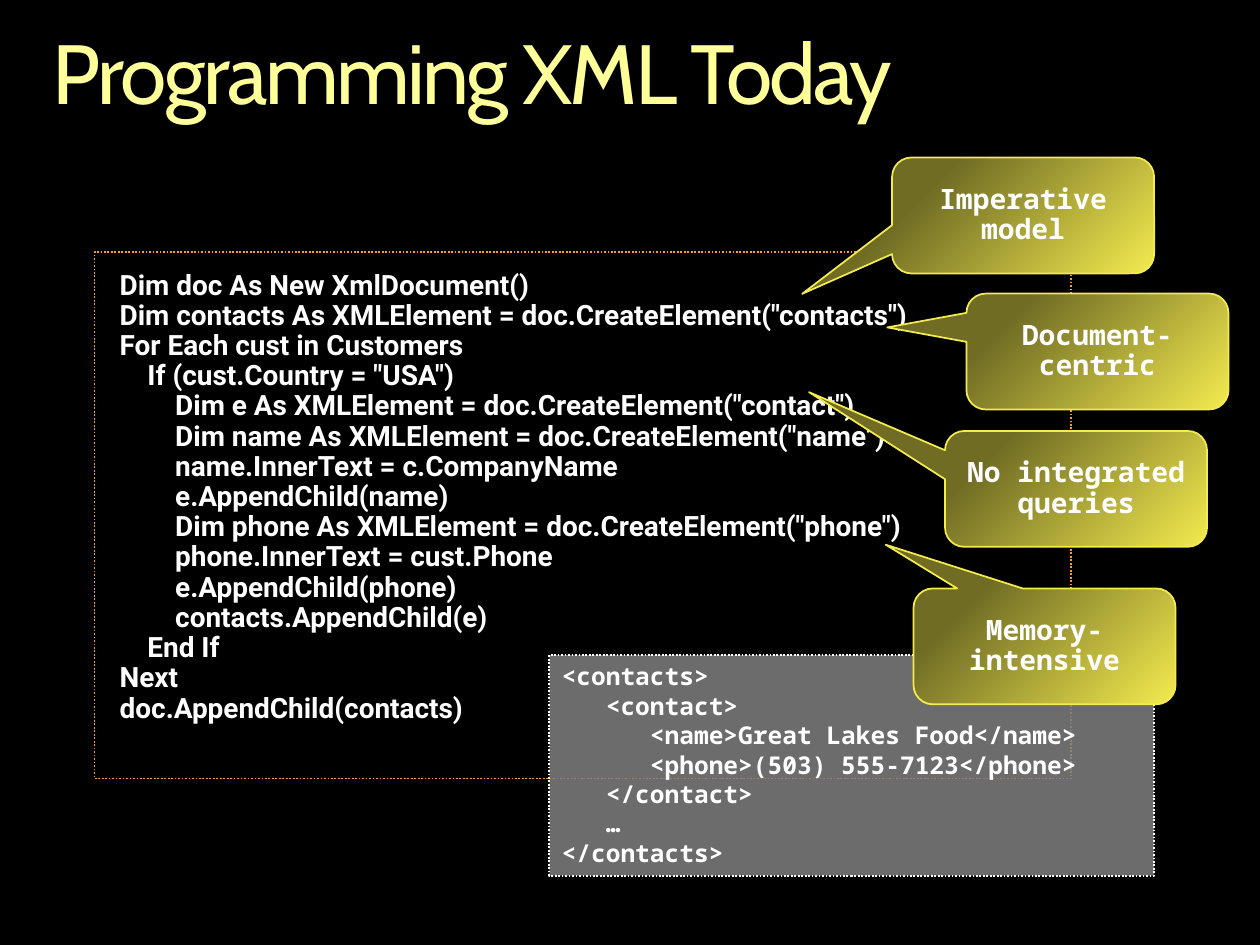
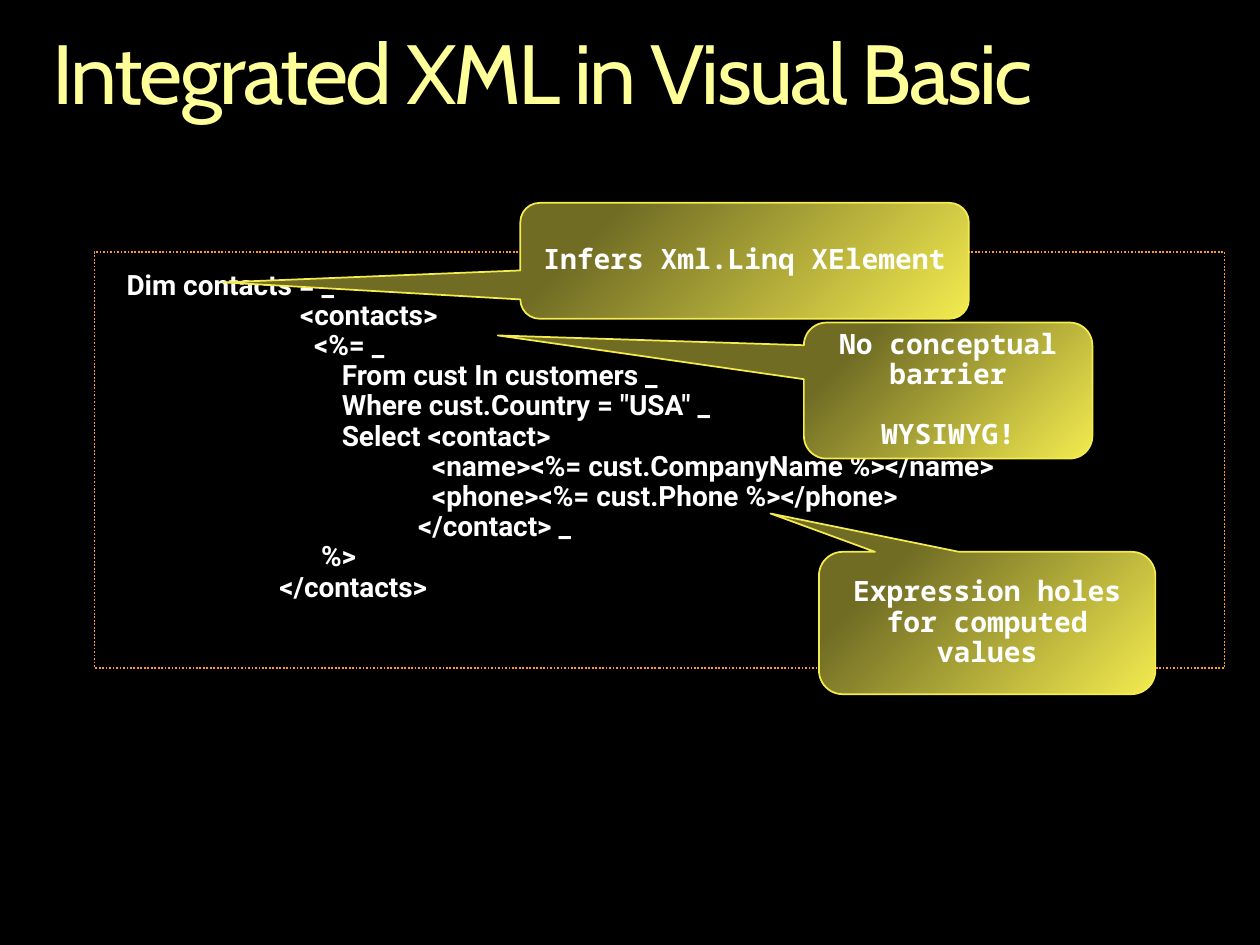
"""Build two slides comparing XML programming styles, with code panels and callouts."""
from dataclasses import dataclass

from lxml.etree import SubElement
from pptx import Presentation
from pptx.dml.color import RGBColor
from pptx.enum.dml import MSO_LINE
from pptx.enum.shapes import MSO_SHAPE as SHAPE
from pptx.enum.text import MSO_ANCHOR as ANCHOR, PP_ALIGN as ALIGN
from pptx.oxml.ns import qn
from pptx.util import Inches, Pt

COLORS = {
    "background": "000000",
    "title": "FFFF99",
    "text": "FFFFFF",
    "code_line": "FF9929",
    "xml_fill": "808080",
    "olive": "706C24",
    "yellow": "F3EB4F",
}
TITLE_FONT = {"name": "Cabin", "size": Pt(48)}
CODE_FONT = {"name": "Roboto", "size": Pt(16), "bold": True}
XML_FONT = {"name": "Noto Sans Mono", "size": Pt(14), "bold": True}
CALLOUT_FONT = {**XML_FONT, "size": Pt(16)}
CALLOUT_SIZE = (2.08, 0.92)
CALLOUT_STOPS = ((0.18, "olive"), (1, "yellow"))
CORNER = 0.167


@dataclass
class Panel:
    box: tuple
    text: str
    fill: str = "background"
    opacity: int = 34
    line: str = "code_line"
    font: dict = None
    insets: tuple = (0.2, 0.15)
    spacing: float = 0.9


@dataclass
class Callout:
    box: tuple
    tip: tuple
    text: str


@dataclass
class SlideContent:
    title: str
    panels: list
    callouts: list


DOM_CODE = """Dim doc As New XmlDocument()
Dim contacts As XMLElement = doc.CreateElement("contacts")
For Each cust in Customers
    If (cust.Country = "USA")
        Dim e As XMLElement = doc.CreateElement("contact")
        Dim name As XMLElement = doc.CreateElement("name")
        name.InnerText = c.CompanyName
        e.AppendChild(name)
        Dim phone As XMLElement = doc.CreateElement("phone")
        phone.InnerText = cust.Phone
        e.AppendChild(phone)
        contacts.AppendChild(e)
    End If
Next
doc.AppendChild(contacts)"""

CONTACTS_XML = """<contacts>
   <contact>
      <name>Great Lakes Food</name>
      <phone>(503) 555-7123</phone>
   </contact>
   …
</contacts>"""

LITERAL_CODE = """ Dim contacts = _
                          <contacts>
                            <%= _
                                From cust In customers _
                                Where cust.Country = "USA" _
                                Select <contact>
                                             <name><%= cust.CompanyName %></name>
                                             <phone><%= cust.Phone %></phone>
                                           </contact> _
                             %>
                       </contacts>"""

SLIDES = [
    SlideContent(
        "Programming XML Today",
        [
            Panel((0.75, 2, 7.75, 4.18), DOM_CODE),
            Panel((4.36, 5.2, 4.8, 1.75), CONTACTS_XML, "xml_fill", 85, "text",
                  XML_FONT, (0.1, 0.05), 1.0),
        ],
        [
            Callout((7.08, 1.25, *CALLOUT_SIZE), (-0.843, 0.676), "Imperative model"),
            Callout((7.67, 2.33, *CALLOUT_SIZE), (-0.802, -0.208), "Document-centric"),
            Callout((7.5, 3.42, *CALLOUT_SIZE), (-1.019, -0.835), "No integrated queries"),
            Callout((7.25, 4.67, *CALLOUT_SIZE), (-0.606, -0.877), "Memory-intensive"),
        ],
    ),
    SlideContent(
        "Integrated XML in Visual Basic",
        [Panel((0.75, 2, 8.97, 3.3), LITERAL_CODE)],
        [
            Callout((4.13, 1.61, 3.56, 0.92), (-1.163, 0.186), "Infers Xml.Linq XElement"),
            Callout((6.38, 2.56, 2.29, 1.08), (-1.561, -0.405),
                    "No conceptual barrier\nWYSIWYG!"),
            Callout((6.5, 4.38, 2.67, 1.13), (-0.644, -0.769),
                    "Expression holes for computed values"),
        ],
    ),
]


def rgb(name: str) -> RGBColor:
    return RGBColor.from_string(COLORS[name])


def apply(target, formats: dict) -> None:
    for key, value in formats.items():
        setattr(target, key, value)


def write(tf, text: str, font: dict, color: str = "text", insets: tuple = (0.1, 0.05),
          anchor=ANCHOR.TOP, align=ALIGN.LEFT, spacing: float = 0.9, gap: float = 0) -> None:
    dx, dy = map(Inches, insets)
    apply(tf, {"word_wrap": True, "vertical_anchor": anchor, "margin_left": dx,
               "margin_right": dx, "margin_top": dy, "margin_bottom": dy})
    for i, line in enumerate(text.split("\n")):
        p = tf.paragraphs[0] if i == 0 else tf.add_paragraph()
        apply(p, {"alignment": align, "line_spacing": spacing})
        if i and gap:
            p.space_before = Pt(gap)
        r = p.add_run()
        r.text = line
        apply(r.font, font)
        r.font.color.rgb = rgb(color)


def add_outlined(s, kind, box: tuple, line: str):
    sp = s.shapes.add_shape(kind, *map(Inches, box))
    sp.shadow.inherit = False
    sp.line.color.rgb = rgb(line)
    sp.line.width = Pt(1)
    return sp


def add_title(s, text: str) -> None:
    sp = s.shapes.add_textbox(*map(Inches, (0.42, 0.25, 9.17, 0.73)))
    write(sp.text_frame, text, TITLE_FONT, "title", (0, 0))
    sp.text_frame.paragraphs[0].runs[0].font._element.set("spc", "-150")


def add_panel(s, panel: Panel) -> None:
    sp = add_outlined(s, SHAPE.RECTANGLE, panel.box, panel.line)
    sp.line.dash_style = MSO_LINE.ROUND_DOT
    sp.fill.solid()
    sp.fill.fore_color.rgb = rgb(panel.fill)
    color = sp._element.spPr.find(qn("a:solidFill"))[0]
    SubElement(color, qn("a:alpha"), val=str(panel.opacity * 1000))
    write(sp.text_frame, panel.text, panel.font or CODE_FONT,
          insets=panel.insets, spacing=panel.spacing)


def add_callout(s, callout: Callout) -> None:
    sp = add_outlined(s, SHAPE.ROUNDED_RECTANGULAR_CALLOUT, callout.box, "yellow")
    for i, value in enumerate((*callout.tip, CORNER)):
        sp.adjustments[i] = value
    sp.fill.gradient()
    sp.fill.gradient_angle = 315
    for stop, (position, color) in zip(sp.fill.gradient_stops, CALLOUT_STOPS):
        stop.position = position
        stop.color.rgb = rgb(color)
    write(sp.text_frame, callout.text, CALLOUT_FONT, anchor=ANCHOR.MIDDLE,
          align=ALIGN.CENTER, gap=17.3)


def add_slide(prs, content: SlideContent) -> None:
    s = prs.slides.add_slide(prs.slide_layouts[6])
    s.background.fill.solid()
    s.background.fill.fore_color.rgb = rgb("background")
    add_title(s, content.title)
    for panel in content.panels:
        add_panel(s, panel)
    for callout in content.callouts:
        add_callout(s, callout)


def main() -> None:
    prs = Presentation()
    prs.slide_width, prs.slide_height = Inches(10), Inches(7.5)
    for content in SLIDES:
        add_slide(prs, content)
    prs.save("out.pptx")


if __name__ == "__main__":
    main()
